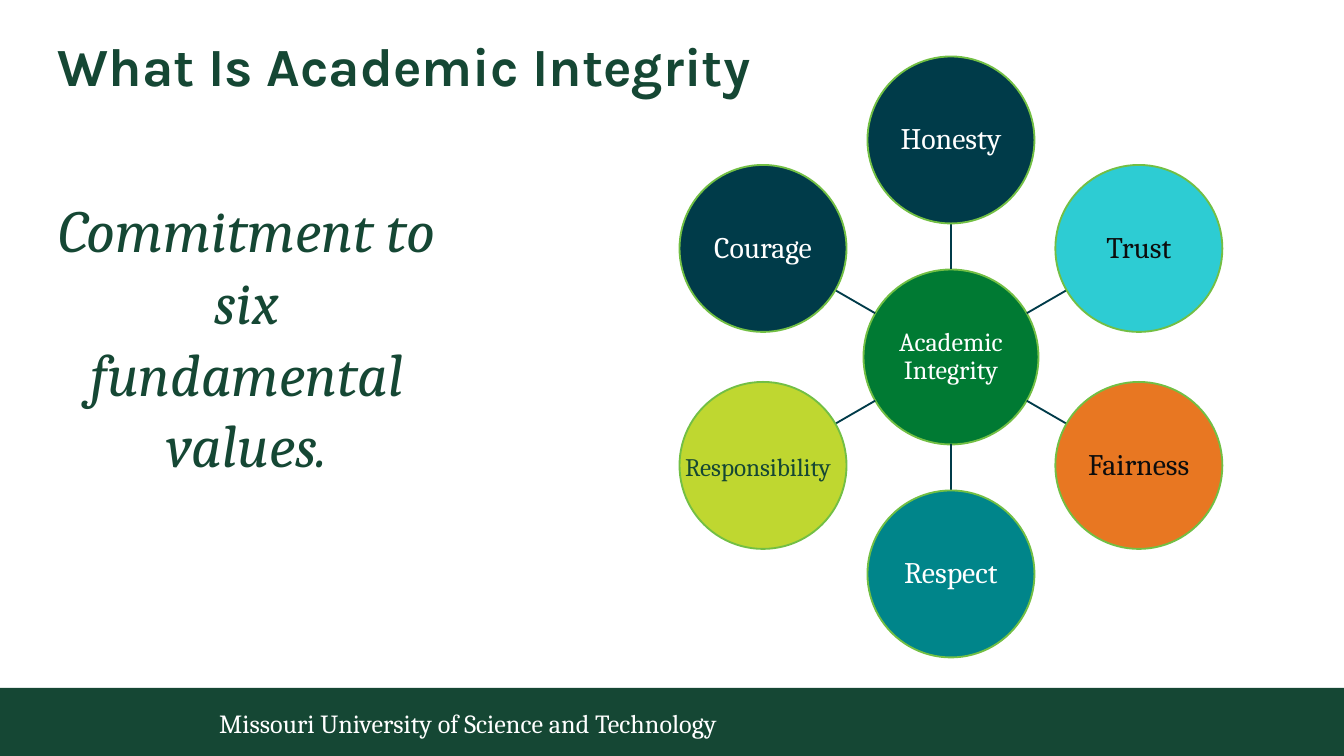
import math
from dataclasses import dataclass

from lxml import etree
from pptx import Presentation
from pptx import util as u
from pptx.dml.color import RGBColor
from pptx.enum import shapes, text
from pptx.oxml.ns import qn

EMU_PER_PX = 914400 / 134.4


@dataclass(frozen=True)
class Theme:
    forest: str = "154734"
    green: str = "007A33"
    outline: str = "72BF44"
    navy: str = "003B49"
    aqua: str = "2DCCD3"
    orange: str = "E87722"
    teal: str = "00858A"
    lime: str = "BFD730"
    white: str = "FFFFFF"
    ink: str = "0D0D0D"
    heading_font: str = "Karla"
    body_font: str = "Cambria"
    title_size: float = 28.8
    statement_size: float = 32
    value_size: float = 16
    small_size: float = 14
    long_label_size: float = 13.5


THEME = Theme()
CENTER = (951, 357)
RING_RADIUS = 217
HUB_SIZE = 175
VALUE_SIZE = 167
# Clockwise from the top: name, fill, text colour
VALUES = [
    ("Honesty", THEME.navy, THEME.white),
    ("Trust", THEME.aqua, THEME.ink),
    ("Fairness", THEME.orange, THEME.ink),
    ("Respect", THEME.teal, THEME.white),
    ("Responsibility", THEME.lime, THEME.forest),
    ("Courage", THEME.navy, THEME.white),
]


def px(length):
    return u.Emu(round(length * EMU_PER_PX))


def place(box, left, top, width, height):
    box.left, box.top, box.width, box.height = map(px, (left, top, width, height))


def write(box, words, *, size, color, font=THEME.body_font, bold=False,
          italic=False, align=text.PP_ALIGN.LEFT, anchor=text.MSO_ANCHOR.TOP,
          inset=None, spacing=1.0, wrap=True):
    frame = box.text_frame
    frame.word_wrap = wrap
    frame.auto_size = text.MSO_AUTO_SIZE.NONE
    frame.vertical_anchor = anchor
    if inset is not None:
        frame.margin_left = frame.margin_right = px(inset)
        frame.margin_top = frame.margin_bottom = px(inset)
    para = frame.paragraphs[0]
    para.alignment = align
    para.line_spacing = spacing
    para.space_before = u.Pt(0)
    span = para.add_run()
    span.text = words
    span.font.name = font
    span.font.size = u.Pt(size)
    span.font.bold = bold
    span.font.italic = italic
    span.font.color.rgb = RGBColor.from_string(color)


def remove_bullet(para):
    properties = para._p.get_or_add_pPr()
    properties.set("marL", "0")
    properties.set("indent", "0")
    etree.SubElement(properties, qn("a:buNone"))


def add_filled(page, kind, bounds, fill, outline=None):
    shape = page.shapes.add_shape(kind, *map(px, bounds))
    shape.shadow.inherit = False
    shape.fill.solid()
    shape.fill.fore_color.rgb = RGBColor.from_string(fill)
    if outline:
        shape.line.color.rgb = RGBColor.from_string(outline)
        shape.line.width = u.Pt(1)
    else:
        shape.line.fill.background()
    return shape


def add_circle(page, center, size, fill):
    x, y = center
    bounds = (x - size / 2, y - size / 2, size, size)
    return add_filled(page, shapes.MSO_SHAPE.OVAL, bounds, fill, THEME.outline)


def label_circle(circle, words, size, color):
    write(circle, words, size=size, color=color, align=text.PP_ALIGN.CENTER,
          anchor=text.MSO_ANCHOR.MIDDLE, inset=1, spacing=0.9)


def add_text_box(page, bounds, words, **style):
    box = page.shapes.add_textbox(*map(px, bounds))
    write(box, words, **style)


def ring_point(angle, radius):
    return (CENTER[0] + radius * math.cos(angle),
            CENTER[1] + radius * math.sin(angle))


def add_spoke(page, angle):
    start = ring_point(angle, HUB_SIZE / 2)
    end = ring_point(angle, RING_RADIUS - VALUE_SIZE / 2)
    spoke = page.shapes.add_connector(
        shapes.MSO_CONNECTOR.STRAIGHT, *map(px, start + end))
    spoke.line.color.rgb = RGBColor.from_string(THEME.navy)
    spoke.line.width = u.Pt(1)
    etree.SubElement(spoke._element.spPr, qn("a:effectLst"))


def add_value_wheel(page):
    hub = add_circle(page, CENTER, HUB_SIZE, THEME.green)
    label_circle(hub, "Academic Integrity", THEME.small_size, THEME.white)
    for index, (name, fill, color) in enumerate(VALUES):
        angle = math.tau * index / len(VALUES) - math.pi / 2
        add_spoke(page, angle)
        circle = add_circle(page, ring_point(angle, RING_RADIUS), VALUE_SIZE, fill)
        if name == "Responsibility":  # too wide for the circle's text area
            add_text_box(page, (672, 445, 188, 44), name, color=color,
                         size=THEME.long_label_size, wrap=False)
        else:
            label_circle(circle, name, THEME.value_size, color)


def add_footer(page):
    add_filled(page, shapes.MSO_SHAPE.RECTANGLE, (0, 688, 1344, 68), THEME.forest)
    add_text_box(page, (206, 696, 853, 54),
                 "Missouri University of Science and Technology",
                 size=THEME.small_size, color=THEME.white,
                 anchor=text.MSO_ANCHOR.MIDDLE)


def fill_placeholders(page):
    title, body = page.shapes.title, page.placeholders[1]
    place(title, 58, 40, 1228, 59)
    write(title, "What Is Academic Integrity", size=THEME.title_size,
          color=THEME.forest, font=THEME.heading_font, bold=True,
          inset=0, spacing=0.9)
    place(body, 58, 193, 378, 454)
    remove_bullet(body.text_frame.paragraphs[0])
    write(body, "Commitment to six fundamental values.",
          size=THEME.statement_size, color=THEME.forest, italic=True,
          align=text.PP_ALIGN.CENTER, inset=0)


def main():
    deck = Presentation()
    deck.slide_width, deck.slide_height = px(1344), px(756)
    page = deck.slides.add_slide(deck.slide_layouts[1])
    fill_placeholders(page)
    add_footer(page)
    add_value_wheel(page)
    deck.save("out.pptx")


if __name__ == "__main__":
    main()
